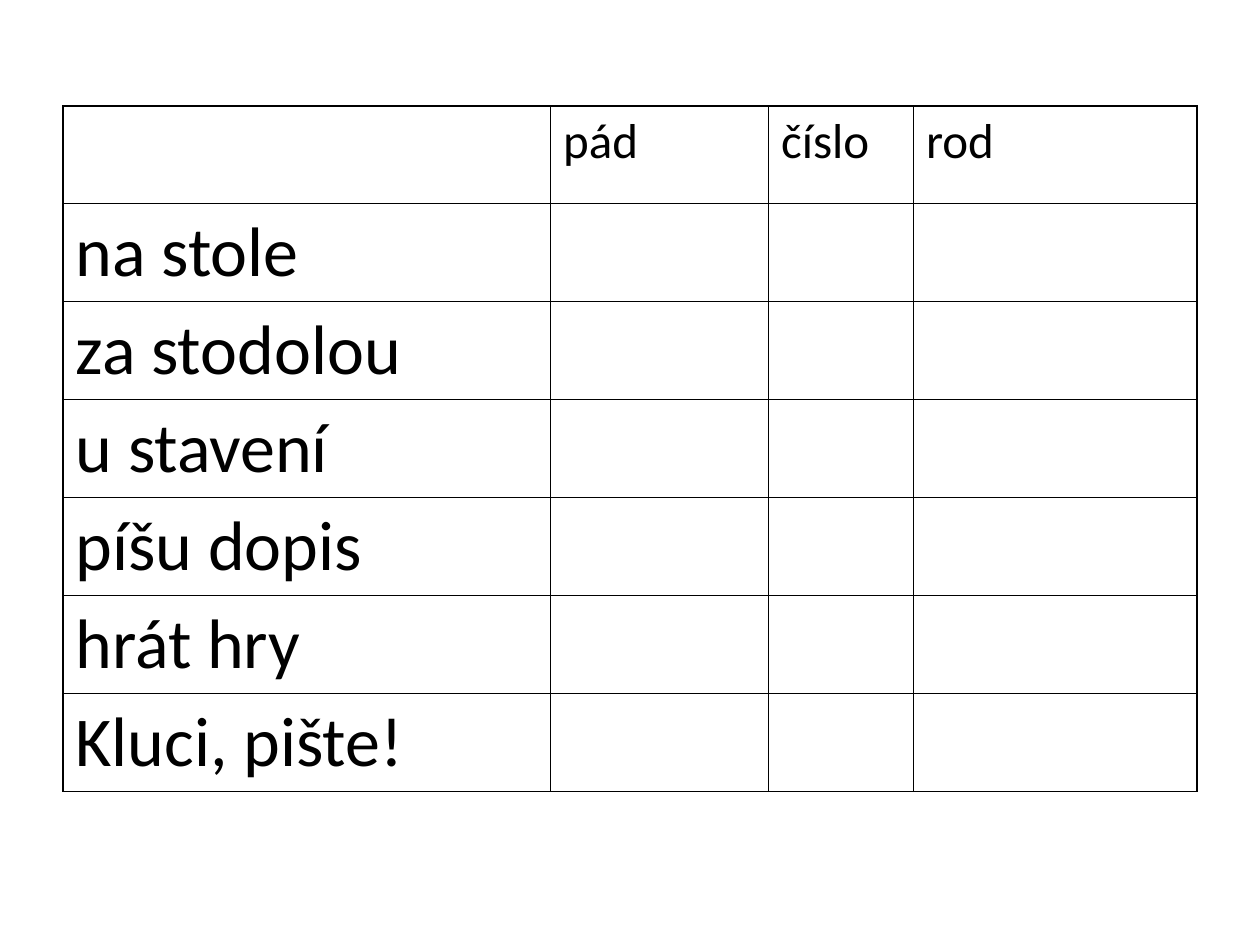
from lxml import etree
from pptx import Presentation
from pptx.dml.color import RGBColor
from pptx.oxml.ns import qn
from pptx.util import Inches, Pt

BLACK = RGBColor(0x00, 0x00, 0x00)
BORDER_SIDES = ("a:lnL", "a:lnR", "a:lnT", "a:lnB")

HEADINGS = ["", "pád", "číslo", "rod"]
PHRASES = [
    "na stole",
    "za stodolou",
    "u stavení",
    "píšu dopis",
    "hrát hry",
    "Kluci, pište!",
]
COLUMN_WIDTHS = [3.87, 1.73, 1.15, 2.25]
HEADING_SIZE = 28
PHRASE_SIZE = 40


def add_borders(cell):
    properties = cell._tc.get_or_add_tcPr()
    for side in BORDER_SIDES:
        line = etree.SubElement(properties, qn(side), w=str(Pt(1)))
        fill = etree.SubElement(line, qn("a:solidFill"))
        etree.SubElement(fill, qn("a:srgbClr"), val=str(BLACK))


deck = Presentation()
deck.slide_width = Inches(10)
deck.slide_height = Inches(7.5)
page = deck.slides.add_slide(deck.slide_layouts[6])

rows = [HEADINGS] + [[phrase, "", "", ""] for phrase in PHRASES]
table = page.shapes.add_table(
    len(rows), len(HEADINGS), Inches(0.5), Inches(0.84), Inches(9), Inches(5.44)
).table
table.first_row = False
table.horz_banding = False
for column, width in zip(table.columns, COLUMN_WIDTHS):
    column.width = Inches(width)

for row_index, row in enumerate(rows):
    size = PHRASE_SIZE if row_index else HEADING_SIZE
    font_format = {"name": "Calibri", "size": Pt(size), "bold": False}
    for column_index, text in enumerate(row):
        cell = table.cell(row_index, column_index)
        add_borders(cell)
        cell.fill.background()
        if text:
            span = cell.text_frame.paragraphs[0].add_run()
            span.text = text
            span.font.color.rgb = BLACK
            for name, value in font_format.items():
                setattr(span.font, name, value)

deck.save("out.pptx")
